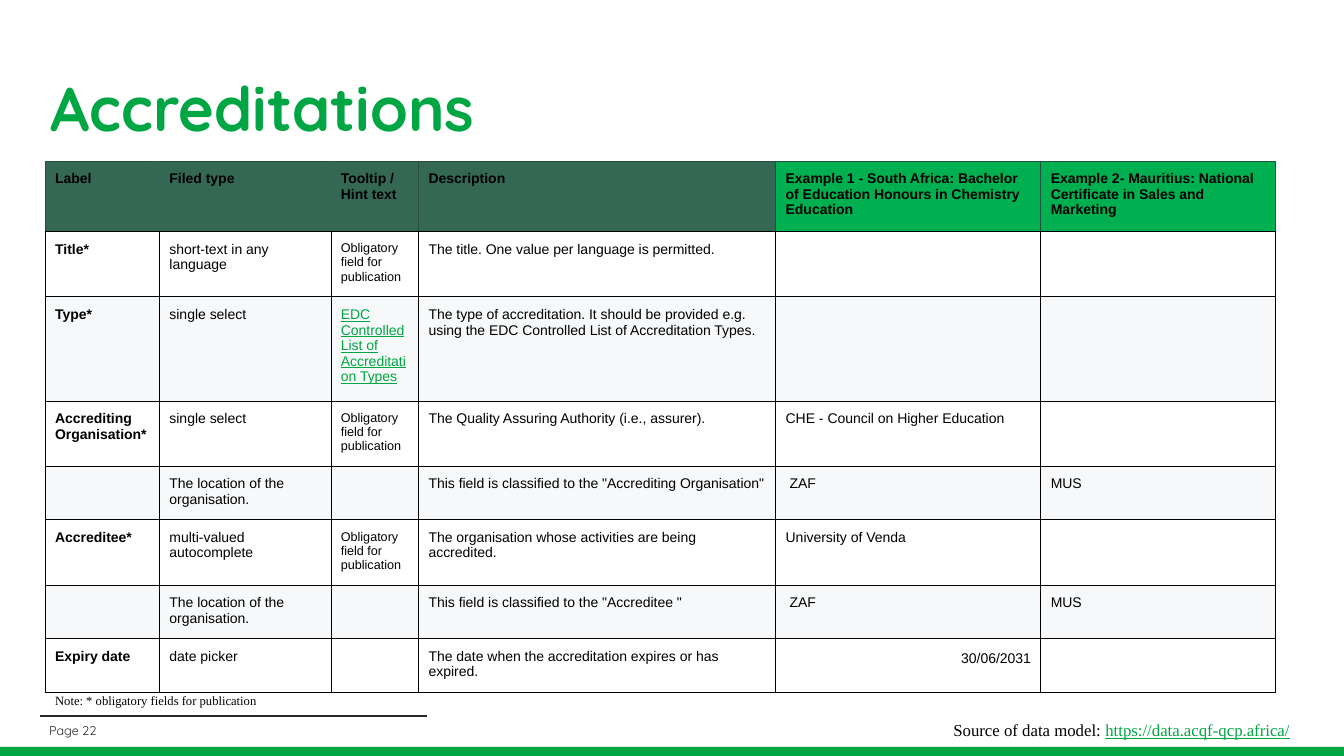
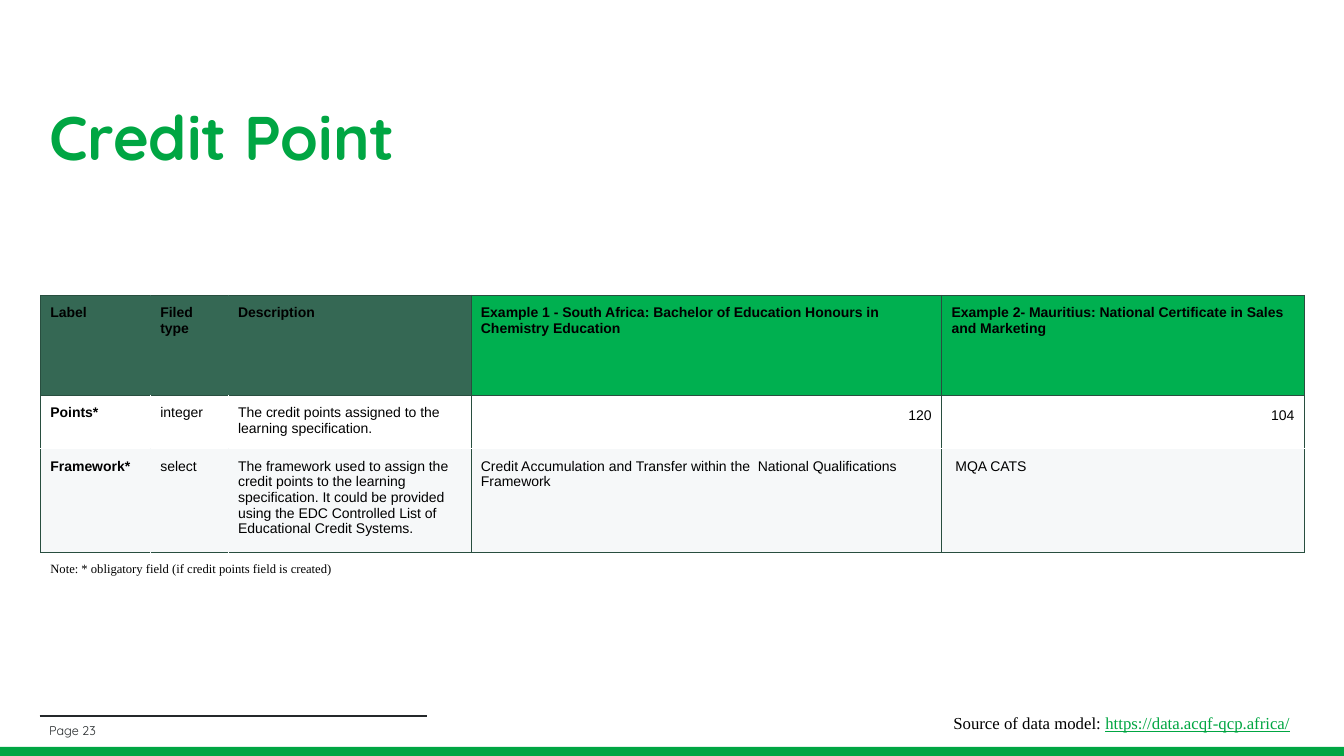
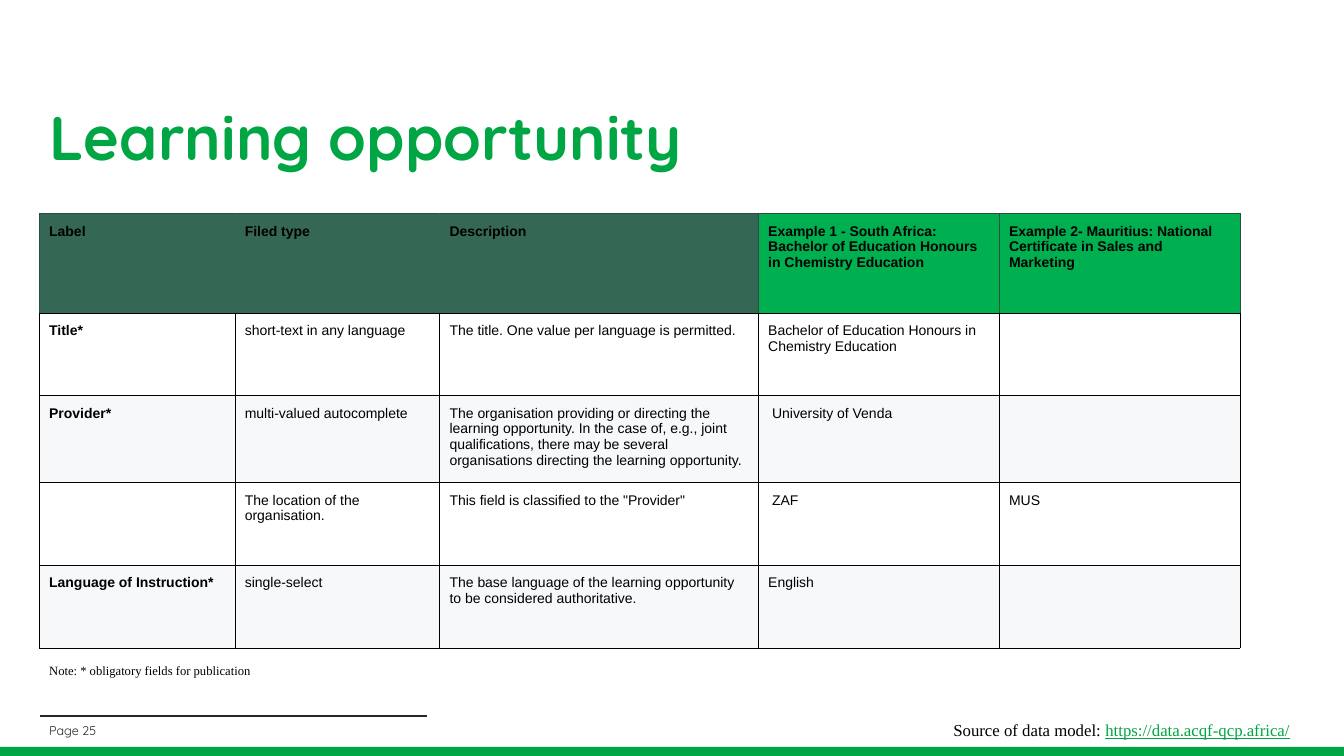
from dataclasses import dataclass
from typing import NamedTuple

import pptx
import pptx.dml.color
import pptx.enum.shapes
import pptx.enum.text
import pptx.oxml
import pptx.oxml.ns
import pptx.util
from pptx.dml.color import RGBColor
from pptx.enum.text import MSO_ANCHOR, PP_ALIGN
from pptx.util import Cm

# Colours
GREEN = RGBColor(0x00, 0xA6, 0x43)
LINK_GREEN = RGBColor(0x00, 0xA6, 0x42)
HEAD_GREEN = RGBColor(0x35, 0x68, 0x54)
EXAMPLE_GREEN = RGBColor(0x00, 0xB0, 0x50)
EDGE_GREEN = RGBColor(0x28, 0x4E, 0x3F)
INK = RGBColor(0x24, 0x28, 0x2A)
BLACK = RGBColor(0x00, 0x00, 0x00)
WHITE = RGBColor(0xFF, 0xFF, 0xFF)
PALE = RGBColor(0xF6, 0xF8, 0xF9)

# Shared measures and wording
SLIDE_W, SLIDE_H = 33.87, 19.05
JOINED_COLS = 3
EXAMPLE_COLS = 2
EXAMPLES = (
    "Example 1 - South Africa: Bachelor of Education Honours in Chemistry Education",
    "Example 2- Mauritius: National Certificate in Sales and Marketing",
)
OBLIGATORY = "Obligatory field for publication"
TYPES_LINK = "EDC Controlled List of Accreditation Types"
LOCATION = "The location of the organisation."
FIELDS_NOTE = "Note: * obligatory fields for publication"


class Style(NamedTuple):
    size: float
    font: str
    color: RGBColor = BLACK
    bold: bool = False
    underline: bool = False


TITLE = Style(44, "Quicksand", GREEN, bold=True)
PAGE = Style(9, "Quicksand", INK)
NOTE = Style(9, "Times New Roman")
SOURCE = Style(12, "Times New Roman")
SOURCE_LINK = SOURCE._replace(color=LINK_GREEN, underline=True)
CELL = Style(10, "Arial")
CELL_BOLD = CELL._replace(bold=True)
CELL_SMALL = CELL._replace(size=9)
CELL_LINK = CELL._replace(color=LINK_GREEN, underline=True)


class Box(NamedTuple):
    left: float
    top: float
    width: float
    height: float

    def lengths(self) -> list[pptx.util.Length]:
        return [Cm(v) for v in self]


@dataclass
class Grid:
    left: float
    top: float
    widths: list[float]
    heights: list[float]
    rows: list[tuple[str, ...]]
    edge: RGBColor = BLACK
    ruled: bool = True


@dataclass
class Page:
    number: int
    title: str
    grid: Grid
    note: str
    note_top: float
    title_box: Box = Box(0.99, 1.7, 31.85, 3.68)
    source_top: float = 17.88


PAGES = [
    Page(
        22, "Accreditations",
        Grid(
            1.14, 4.06, [2.88, 4.32, 2.21, 9, 6.68, 5.92],
            [1.7, 1.56, 2.5, 1.56, 1.33, 1.57, 1.33, 1.32],
            [
                ("Label", "Filed type", "Tooltip / Hint text", "Description", *EXAMPLES),
                ("Title*", "short-text in any language", OBLIGATORY,
                 "The title. One value per language is permitted.", "", ""),
                ("Type*", "single select", TYPES_LINK,
                 "The type of accreditation. It should be provided e.g. using the "
                 "EDC Controlled List of Accreditation Types.", "", ""),
                ("Accrediting Organisation*", "single select", OBLIGATORY,
                 "The Quality Assuring Authority (i.e., assurer).",
                 "CHE - Council on Higher Education", ""),
                ("", LOCATION, "",
                 'This field is classified to the "Accrediting Organisation"', " ZAF", "MUS"),
                ("Accreditee*", "multi-valued autocomplete", OBLIGATORY,
                 "The organisation whose activities are being accredited.",
                 "University of Venda", ""),
                ("", LOCATION, "",
                 'This field is classified to the "Accreditee "', " ZAF", "MUS"),
                ("Expiry date", "date picker", "",
                 "The date when the accreditation expires or has expired.", "30/06/2031", ""),
            ],
        ),
        FIELDS_NOTE, 17.27, title_box=Box(1.02, 1.57, 31.85, 2.49),
    ),
    Page(
        23, "Credit Point",
        Grid(
            1.02, 7.44, [2.77, 1.96, 6.12, 11.86, 9.14], [2.52, 1.32, 2.46],
            [
                ("Label", "Filed type", "Description", *EXAMPLES),
                ("Points*", "integer",
                 "The credit points assigned to the learning specification.", "120", "104"),
                ("Framework*", "select",
                 "The framework used to assign the credit points to the learning "
                 "specification. It could be provided using the EDC Controlled List of "
                 "Educational Credit Systems.",
                 "Credit Accumulation and Transfer within the  National Qualifications "
                 "Framework", " MQA CATS"),
            ],
            edge=EDGE_GREEN, ruled=False,
        ),
        "Note: * obligatory field (if credit points field is created)", 13.94,
        source_top=17.7,
    ),
    Page(
        25, "Learning opportunity",
        Grid(
            0.99, 5.38, [4.93, 5.16, 8.03, 6.07, 6.07], [2.51, 2.08, 2.13, 2.08, 2.08],
            [
                ("Label", "Filed type", "Description", *EXAMPLES),
                ("Title*", "short-text in any language",
                 "The title. One value per language is permitted.",
                 "Bachelor of Education Honours in Chemistry Education", ""),
                ("Provider*", "multi-valued autocomplete",
                 "The organisation providing or directing the learning opportunity. In the "
                 "case of, e.g., joint qualifications, there may be several organisations "
                 "directing the learning opportunity.", " University of Venda", ""),
                ("", LOCATION, 'This field is classified to the "Provider"', " ZAF", "MUS"),
                ("Language of Instruction*", "single-select",
                 "The base language of the learning opportunity to be considered "
                 "authoritative.", "English", ""),
            ],
        ),
        FIELDS_NOTE, 16.51,
    ),
]


# Text
def format_run(r, style: Style) -> None:
    r.font.size = pptx.util.Pt(style.size)
    r.font.name = style.font
    r.font.color.rgb = style.color
    r.font.bold = style.bold
    r.font.underline = style.underline


def add_text(s, box: Box, runs: list[tuple[str, Style]], inset: float = 0.25,
             anchor: MSO_ANCHOR = MSO_ANCHOR.TOP, align: PP_ALIGN = PP_ALIGN.LEFT,
             spacing: float = 1.0) -> None:
    tf = s.shapes.add_textbox(*box.lengths()).text_frame
    tf.word_wrap = True
    tf.vertical_anchor = anchor
    tf.margin_left = tf.margin_right = Cm(0.25)
    tf.margin_top = tf.margin_bottom = Cm(inset)
    p = tf.paragraphs[0]
    p.alignment = align
    p.line_spacing = spacing
    for text, style in runs:
        r = p.add_run()
        r.text = text
        format_run(r, style)


# Table
def fill_color(grid: Grid, row: int, col: int) -> RGBColor:
    if row == 0:
        is_example = col >= len(grid.widths) - EXAMPLE_COLS
        return EXAMPLE_GREEN if is_example else HEAD_GREEN
    return WHITE if row % 2 else PALE


def upright_color(grid: Grid, row: int, line: int) -> RGBColor:
    """Colour of the vertical line number `line` beside a row's cells."""
    if 0 < line < JOINED_COLS and (row == 0 or not grid.ruled):
        return fill_color(grid, row, line)
    return EDGE_GREEN if row == 0 else grid.edge


def level_color(grid: Grid, line: int) -> RGBColor:
    """Colour of the horizontal line number `line`, counted from the top."""
    if line == 0:
        return EDGE_GREEN
    if not grid.ruled and 1 < line < len(grid.rows):
        return WHITE
    return grid.edge


def add_border(cell, side: str, color: RGBColor) -> None:
    cell._tc.get_or_add_tcPr().append(pptx.oxml.parse_xml(
        f'<a:ln{side} {pptx.oxml.ns.nsdecls("a")} w="7620"><a:solidFill>'
        f'<a:srgbClr val="{color}"/></a:solidFill></a:ln{side}>'))


def cell_style(row: int, col: int, text: str) -> Style:
    if row == 0 or col == 0:
        return CELL_BOLD
    return {OBLIGATORY: CELL_SMALL, TYPES_LINK: CELL_LINK}.get(text, CELL)


def add_grid(s, grid: Grid) -> None:
    box = Box(grid.left, grid.top, sum(grid.widths), sum(grid.heights))
    table = s.shapes.add_table(len(grid.rows), len(grid.widths), *box.lengths()).table
    table.horz_banding = False
    for column, width in zip(table.columns, grid.widths):
        column.width = Cm(width)
    for i, (row, texts) in enumerate(zip(table.rows, grid.rows)):
        row.height = Cm(grid.heights[i])
        for j, text in enumerate(texts):
            cell = table.cell(i, j)
            add_border(cell, "L", upright_color(grid, i, j))
            add_border(cell, "R", upright_color(grid, i, j + 1))
            add_border(cell, "T", level_color(grid, i))
            add_border(cell, "B", level_color(grid, i + 1))
            cell.fill.solid()
            cell.fill.fore_color.rgb = fill_color(grid, i, j)
            cell.margin_left = cell.margin_right = Cm(0.25)
            cell.margin_top = cell.margin_bottom = Cm(0.25)
            if not text:
                continue
            cell.text_frame.text = text
            p = cell.text_frame.paragraphs[0]
            format_run(p.runs[0], cell_style(i, j, text))
            if text[0].isdigit():
                p.alignment = PP_ALIGN.RIGHT
                p.line_spacing = 1.15


# Footer shared by all slides
def add_footer(s, page: Page) -> None:
    band_box = Box(0, 18.82, SLIDE_W, SLIDE_H - 18.82)
    band = s.shapes.add_shape(pptx.enum.shapes.MSO_SHAPE.RECTANGLE, *band_box.lengths())
    band.shadow.inherit = False
    band.fill.solid()
    band.fill.fore_color.rgb = GREEN
    band.line.fill.background()

    rule = s.shapes.add_connector(pptx.enum.shapes.MSO_CONNECTOR.STRAIGHT,
                                  Cm(1), Cm(18.05), Cm(10.77), Cm(18.05))
    rule.line.color.rgb = INK
    rule.line.width = pptx.util.Pt(1.5)
    rule._element.spPr.append(
        pptx.oxml.parse_xml(f'<a:effectLst {pptx.oxml.ns.nsdecls("a")}/>'))

    add_text(s, Box(0.99, 18.16, 10.31, 0.48), [(f"Page {page.number}", PAGE)],
             inset=0.13, anchor=MSO_ANCHOR.MIDDLE)
    add_text(s, Box(19.6, page.source_top, 13.16, 1.02),
             [("Source of data model: ", SOURCE),
              ("https://data.acqf-qcp.africa/", SOURCE_LINK)], align=PP_ALIGN.RIGHT)


def add_page(prs, page: Page) -> None:
    s = prs.slides.add_slide(prs.slide_layouts[6])
    add_footer(s, page)
    add_text(s, page.title_box, [(page.title, TITLE)], inset=0.13,
             anchor=MSO_ANCHOR.MIDDLE, spacing=0.9)
    add_grid(s, page.grid)
    add_text(s, Box(page.grid.left, page.note_top, 13.26, 0.89), [(page.note, NOTE)])


def main() -> None:
    prs = pptx.Presentation()
    prs.slide_width, prs.slide_height = Cm(SLIDE_W), Cm(SLIDE_H)
    for page in PAGES:
        add_page(prs, page)
    prs.save("out.pptx")


if __name__ == "__main__":
    main()
